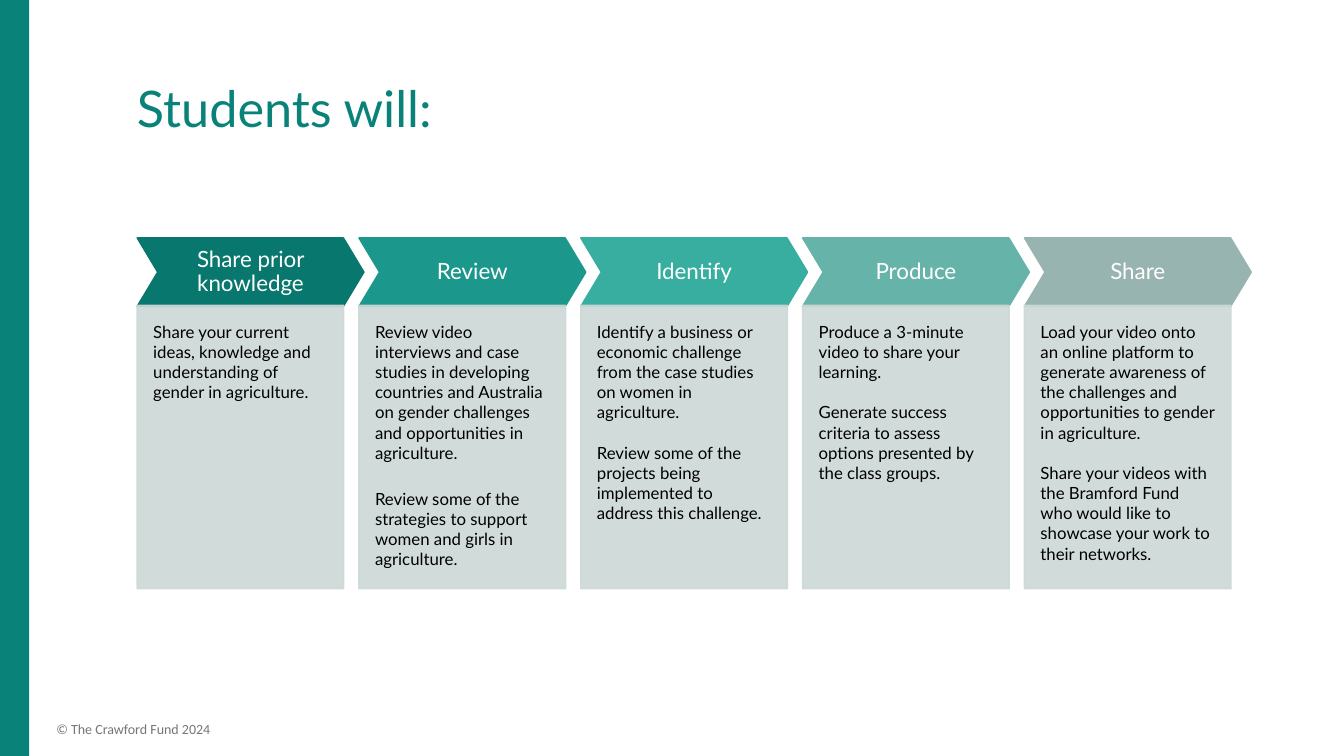
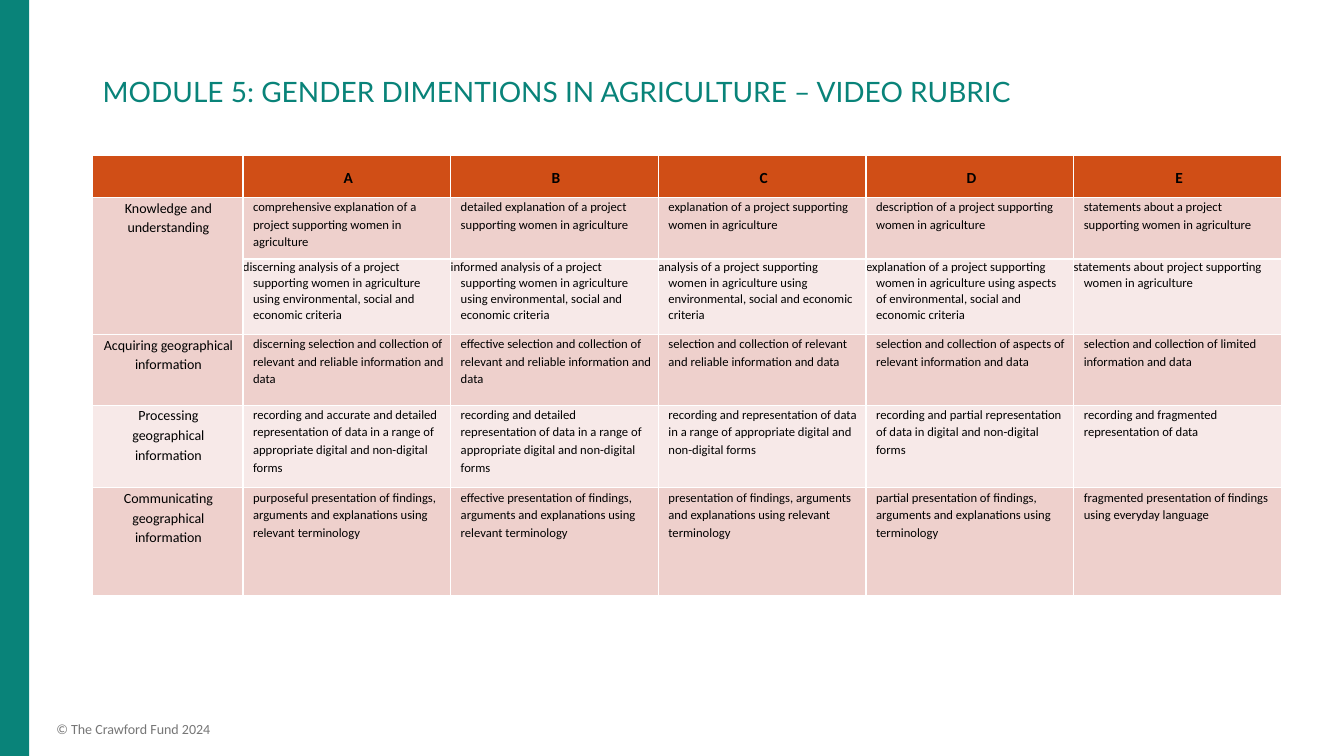
from lxml import etree
from pptx import Presentation
from pptx.dml.color import RGBColor
from pptx.enum.shapes import MSO_SHAPE
from pptx.enum.text import MSO_ANCHOR, PP_ALIGN
from pptx.oxml.ns import qn
from pptx.util import Inches, Pt

RECTANGLE, CHEVRON = MSO_SHAPE.RECTANGLE, MSO_SHAPE.CHEVRON
LEFT, CENTER = PP_ALIGN.LEFT, PP_ALIGN.CENTER
TOP, MIDDLE, BOTTOM = MSO_ANCHOR.TOP, MSO_ANCHOR.MIDDLE, MSO_ANCHOR.BOTTOM

COLORS = {
    "brand": "098379",
    "footer": "767676",
    "white": "FFFFFF",
    "black": "000000",
    "panel": "CCD9D7",
    "header": "D04E16",
    "row_dark": "EED0CC",
    "row_light": "F7E9E8",
    "step_1": "08776E",
    "step_2": "1B978B",
    "step_3": "38AEA0",
    "step_4": "66B3A9",
    "step_5": "98B4B0",
}
HEADING_FONT = "Lato"
TABLE_FONT = "Calibri"
DEFAULT_MARGINS = (0.1, 0.05, 0.1, 0.05)

STEPS = [
    ("Share prior knowledge", 0, [
        "Share your current ideas, knowledge and understanding of gender in agriculture."]),
    ("Review", 18.5, [
        "Review video interviews and case studies in developing countries and Australia "
        "on gender challenges and opportunities in agriculture.",
        "Review some of the strategies to support women and girls in agriculture."]),
    ("Identify", 14.4, [
        "Identify a business or economic challenge from the case studies on women in agriculture.",
        "Review some of the projects being implemented to address this challenge."]),
    ("Produce", 14.4, [
        "Produce a 3-minute video to share your learning.",
        "Generate success criteria to assess options presented by the class groups."]),
    ("Share", 14.4, [
        "Load your video onto an online platform to generate awareness of the challenges "
        "and opportunities to gender in agriculture.",
        "Share your videos with the Bramford Fund who would like to showcase your work "
        "to their networks."]),
]

RUBRIC = [
    ["", "A", "B", "C", "D", "E"],
    ["Knowledge and understanding",
     "comprehensive explanation of a project supporting women in agriculture",
     "detailed explanation of a project supporting women in agriculture",
     "explanation of a project supporting women in agriculture",
     "description of a project supporting women in agriculture",
     "statements about a project supporting women in agriculture"],
    ["",
     "discerning analysis of a project supporting women in agriculture using "
     "environmental, social and economic criteria",
     "informed analysis of a project supporting women in agriculture using "
     "environmental, social and economic criteria",
     "analysis of a project supporting women in agriculture using environmental, "
     "social and economic criteria",
     "explanation of a project supporting women in agriculture using aspects of "
     "environmental, social and economic criteria",
     "statements about project supporting women in agriculture"],
    ["Acquiring geographical information",
     "discerning selection and collection of relevant and reliable information and data",
     "effective selection and collection of relevant and reliable information and data",
     "selection and collection of relevant and reliable information and data",
     "selection and collection of aspects of relevant information and data",
     "selection and collection of limited information and data"],
    ["Processing geographical information",
     "recording and accurate and detailed representation of data in a range of "
     "appropriate digital and non-digital forms",
     "recording and detailed representation of data in a range of appropriate digital "
     "and non-digital forms",
     "recording and representation of data in a range of appropriate digital and "
     "non-digital forms",
     "recording and partial representation of data in digital and non-digital forms",
     "recording and fragmented representation of data"],
    ["Communicating geographical information",
     "purposeful presentation of findings, arguments and explanations using relevant terminology",
     "effective presentation of findings, arguments and explanations using relevant terminology",
     "presentation of findings, arguments and explanations using relevant terminology",
     "partial presentation of findings, arguments and explanations using terminology",
     "fragmented presentation of findings using everyday language"],
]
COLUMN_WIDTHS = [1.49] + [2.06] * 5
ROW_HEIGHTS = [0.42, 0.61, 0.75, 0.7, 0.82, 1.07]
HANGING_ROW = 2


def rgb(name):
    return RGBColor.from_string(COLORS[name])


def set_margins(target, margins):
    (target.margin_left, target.margin_top,
     target.margin_right, target.margin_bottom) = map(Inches, margins)


def write_text(text_frame, texts, size, color, font=HEADING_FONT, bold=False, align=LEFT,
               line_spacing=1.0, gap=0, left_indent=0, first_indent=0):
    for index, text in enumerate(texts):
        paragraph = text_frame.paragraphs[0] if index == 0 else text_frame.add_paragraph()
        properties = paragraph._p.get_or_add_pPr()
        properties.set("marL", str(Inches(left_indent)))
        properties.set("indent", str(Inches(first_indent)))
        paragraph.alignment = align
        paragraph.line_spacing = line_spacing
        if index:
            paragraph.space_before = Pt(gap)
        run = paragraph.add_run()
        run.text = text
        run.font.name = font
        run.font.size = Pt(size)
        run.font.bold = bold
        run.font.color.rgb = rgb(color)


def set_frame(shape, anchor, margins):
    text_frame = shape.text_frame
    text_frame.word_wrap = True
    text_frame.vertical_anchor = anchor
    set_margins(text_frame, margins)
    return text_frame


def add_text(slide, box, text, anchor=TOP, **text_format):
    shape = slide.shapes.add_textbox(*map(Inches, box))
    write_text(set_frame(shape, anchor, DEFAULT_MARGINS), [text], **text_format)


def add_block(slide, kind, box, color, outlined=True):
    shape = slide.shapes.add_shape(kind, *map(Inches, box))
    shape.shadow.inherit = False
    shape.fill.solid()
    shape.fill.fore_color.rgb = rgb(color)
    if outlined:
        shape.line.color.rgb = rgb(color)
        shape.line.width = Pt(1)
    else:
        shape.line.fill.background()
    return shape


def set_opacity(shape, percent):
    for color in shape._element.spPr.iter(qn("a:srgbClr")):
        etree.SubElement(color, qn("a:alpha")).set("val", str(percent * 1000))


def add_slide(presentation, title, title_box, title_size):
    slide = presentation.slides.add_slide(presentation.slide_layouts[6])
    add_block(slide, RECTANGLE, (-0.01, -0.01, 0.3, 7.53), "brand", outlined=False)
    add_text(slide, (0.46, 7.1, 6.85, 0.27), "© The Crawford Fund 2024",
             size=10, color="footer", font=TABLE_FONT)
    add_text(slide, title_box, title, anchor=BOTTOM,
             size=title_size, color="brand", line_spacing=0.9)
    return slide


def add_step(slide, index, heading, gap, texts):
    left = 1.36 + 2.2 * index
    chevron = add_block(slide, CHEVRON, (left, 2.36, 2.25, 0.68), f"step_{index + 1}")
    chevron.adjustments[0] = 0.3
    write_text(set_frame(chevron, MIDDLE, (0.08,) * 4), [heading],
               size=16, color="white", align=CENTER, line_spacing=0.9)
    panel = add_block(slide, RECTANGLE, (left, 3.03, 2.05, 2.81), "panel")
    set_opacity(panel, 90)
    write_text(set_frame(panel, TOP, (0.16, 0.16, 0.16, 0.32)), texts,
               size=12, color="black", gap=gap)


def set_borders(cell, color, width):
    properties = cell._tc.get_or_add_tcPr()
    for side in ("lnL", "lnR", "lnT", "lnB"):
        line = etree.SubElement(properties, qn(f"a:{side}"), w=str(Pt(width)))
        fill = etree.SubElement(line, qn("a:solidFill"))
        etree.SubElement(fill, qn("a:srgbClr"), val=COLORS[color])


def cell_format(row, column):
    if row == 0:
        return dict(size=11, bold=True, align=CENTER, line_spacing=1.15, left_indent=0.1)
    if column == 0:
        return dict(size=10, align=CENTER, line_spacing=1.15, left_indent=0.08)
    if row == HANGING_ROW:
        return dict(size=9, line_spacing=1.05, left_indent=0.1, first_indent=-0.1)
    return dict(size=9, line_spacing=1.15, left_indent=0.1)


def add_rubric(slide):
    box = (0.92, 1.54, sum(COLUMN_WIDTHS), sum(ROW_HEIGHTS))
    table = slide.shapes.add_table(len(RUBRIC), len(COLUMN_WIDTHS), *map(Inches, box)).table
    table.horz_banding = False
    for column, width in zip(table.columns, COLUMN_WIDTHS):
        column.width = Inches(width)
    for row, height in zip(table.rows, ROW_HEIGHTS):
        row.height = Inches(height)
    for row, texts in enumerate(RUBRIC):
        row_color = "header" if row == 0 else "row_dark" if row % 2 else "row_light"
        for column, text in enumerate(texts):
            cell = table.cell(row, column)
            set_margins(cell, (0, 0, 0.07, 0))
            cell.vertical_anchor = TOP if row else MIDDLE
            set_borders(cell, "white", 1)
            cell.fill.solid()
            cell.fill.fore_color.rgb = rgb(row_color)
            if text:
                write_text(cell.text_frame, [text], color="black", font=TABLE_FONT,
                           **cell_format(row, column))
    table.cell(1, 0).merge(table.cell(2, 0))


def main():
    presentation = Presentation()
    presentation.slide_width = Inches(13.33)
    presentation.slide_height = Inches(7.5)
    steps_slide = add_slide(presentation, "Students will:", (1.26, 0.79, 9.35, 0.63), 36)
    for index, step in enumerate(STEPS):
        add_step(steps_slide, index, *step)
    rubric_slide = add_slide(
        presentation, "MODULE 5: GENDER DIMENTIONS IN AGRICULTURE – VIDEO RUBRIC",
        (0.92, 0.4, 11.5, 0.73), 20)
    add_rubric(rubric_slide)
    presentation.save("out.pptx")


if __name__ == "__main__":
    main()
